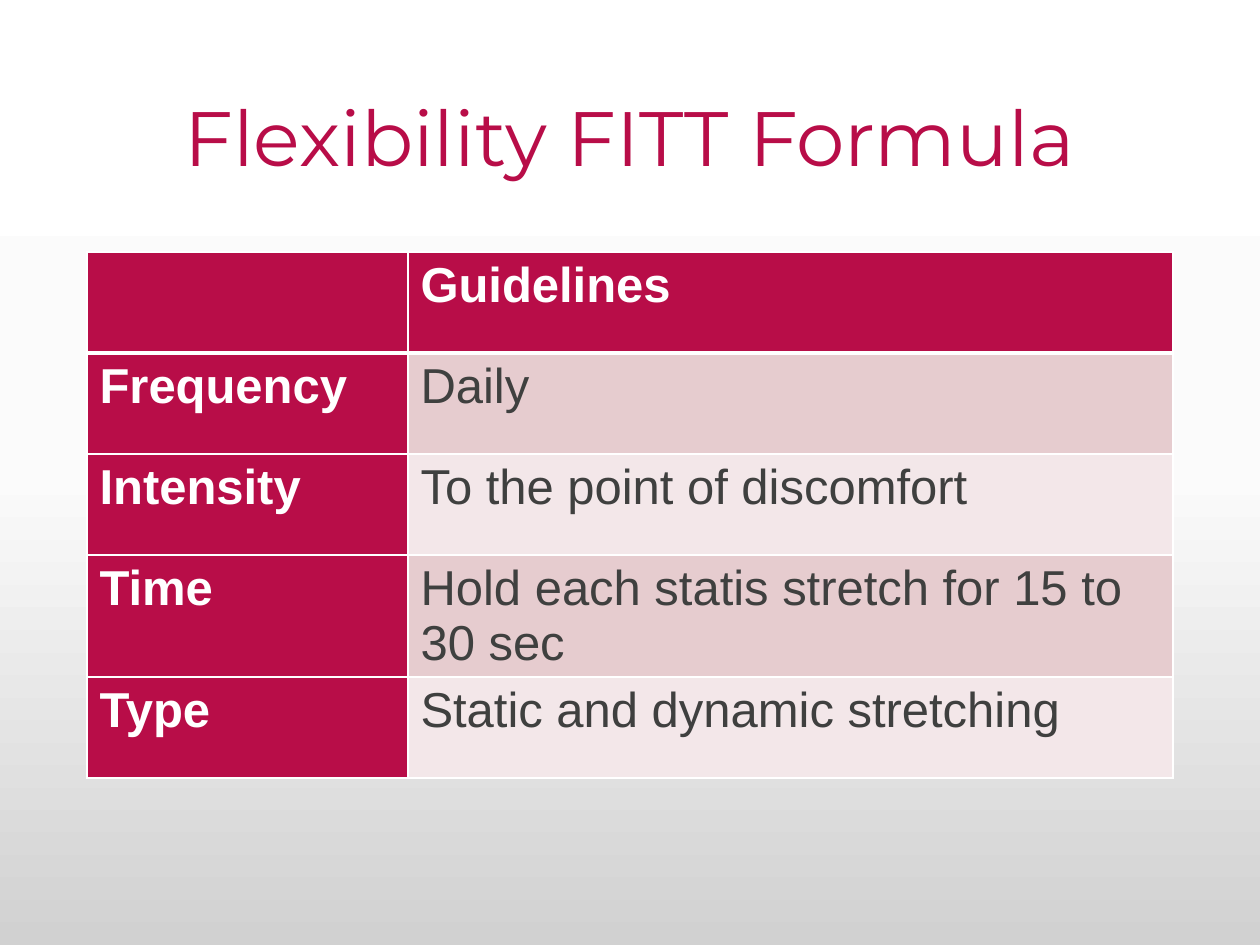
"""Build the Flexibility FITT Formula slide."""
from copy import deepcopy
from typing import NamedTuple

from pptx import Presentation
from pptx.dml.color import RGBColor
from pptx.enum.text import MSO_ANCHOR, PP_ALIGN
from pptx.oxml.ns import qn
from pptx.oxml.xmlchemy import OxmlElement
from pptx.slide import Slide
from pptx.table import _Cell
from pptx.util import Emu, Pt

COLORS = {
    "crimson": "B80D48",
    "band_dark": "E6CCCF",
    "band_light": "F3E7E9",
    "ink": "3F403F",
    "white": "FFFFFF",
    "mist": "FBFBFB",
    "grey": "D1D1D1",
}


class Guideline(NamedTuple):
    heading: str
    advice: str


GUIDELINES = [
    Guideline("", "Guidelines"),
    Guideline("Frequency", "Daily"),
    Guideline("Intensity", "To the point of discomfort"),
    Guideline("Time", "Hold each statis stretch for 15 to 30 sec"),
    Guideline("Type", "Static and dynamic stretching"),
]
COLUMN_WIDTHS = (321, 765)
ROW_HEIGHT = 101


def px(length: int) -> Emu:
    return Emu(round(length * 914400 / 126))


def rgb(name: str) -> RGBColor:
    return RGBColor.from_string(COLORS[name])


def paint_background(slide: Slide) -> None:
    fill = slide.background.fill
    fill.gradient()
    fill.gradient_angle = 270
    stop_list = slide.element.find(".//" + qn("a:gsLst"))
    stop_list.insert(1, deepcopy(stop_list[0]))
    for stop, name, position in zip(fill.gradient_stops, ("white", "mist", "grey"), (0, 0.5, 1)):
        stop.color.rgb = rgb(name)
        stop.position = position


def add_title(slide: Slide, wording: str) -> None:
    title = slide.shapes.title
    title.left, title.top, title.width, title.height = map(px, (87, 50, 1086, 183))
    title.text_frame.text = wording
    title.text_frame.vertical_anchor = MSO_ANCHOR.MIDDLE
    paragraph = title.text_frame.paragraphs[0]
    paragraph.alignment = PP_ALIGN.CENTER
    paragraph.line_spacing = 0.9
    paragraph.font.name = "Montserrat"
    paragraph.font.size = Pt(44)
    paragraph.font.color.rgb = rgb("crimson")


def add_border(cell: _Cell, side: str, points: int) -> None:
    line = OxmlElement(f"a:ln{side}")
    line.set("w", str(Pt(points)))
    solid = OxmlElement("a:solidFill")
    color = OxmlElement("a:srgbClr")
    color.set("val", COLORS["white"])
    solid.append(color)
    line.append(solid)
    cell._tc.get_or_add_tcPr().append(line)


def fill_cell(cell: _Cell, wording: str, row: int, is_heading: bool) -> None:
    widths = {"L": 1, "R": 1, "T": 3 if row == 1 else 1, "B": 3 if row == 0 else 1}
    for side, points in widths.items():
        add_border(cell, side, points)
    band = "band_dark" if row % 2 else "band_light"
    cell.fill.solid()
    cell.fill.fore_color.rgb = rgb("crimson" if is_heading else band)
    cell.text = wording
    font = cell.text_frame.paragraphs[0].font
    font.name = "Arial"
    font.size = Pt(28)
    font.bold = is_heading
    font.color.rgb = rgb("white" if is_heading else "ink")


def add_guidelines(slide: Slide, guidelines: list[Guideline]) -> None:
    frame = slide.shapes.add_table(
        len(guidelines), len(COLUMN_WIDTHS), px(87), px(252),
        px(sum(COLUMN_WIDTHS)), px(ROW_HEIGHT * len(guidelines)),
    )
    table = frame.table
    table.first_col = True
    for column, width in zip(table.columns, COLUMN_WIDTHS):
        column.width = px(width)
    for row, guideline in enumerate(guidelines):
        table.rows[row].height = px(ROW_HEIGHT)
        for column, wording in enumerate(guideline):
            fill_cell(table.cell(row, column), wording, row, row == 0 or column == 0)


def main() -> None:
    presentation = Presentation()
    presentation.slide_width, presentation.slide_height = px(1260), px(945)
    slide = presentation.slides.add_slide(presentation.slide_layouts[5])
    paint_background(slide)
    add_title(slide, "Flexibility FITT Formula")
    add_guidelines(slide, GUIDELINES)
    presentation.save("out.pptx")


if __name__ == "__main__":
    main()
